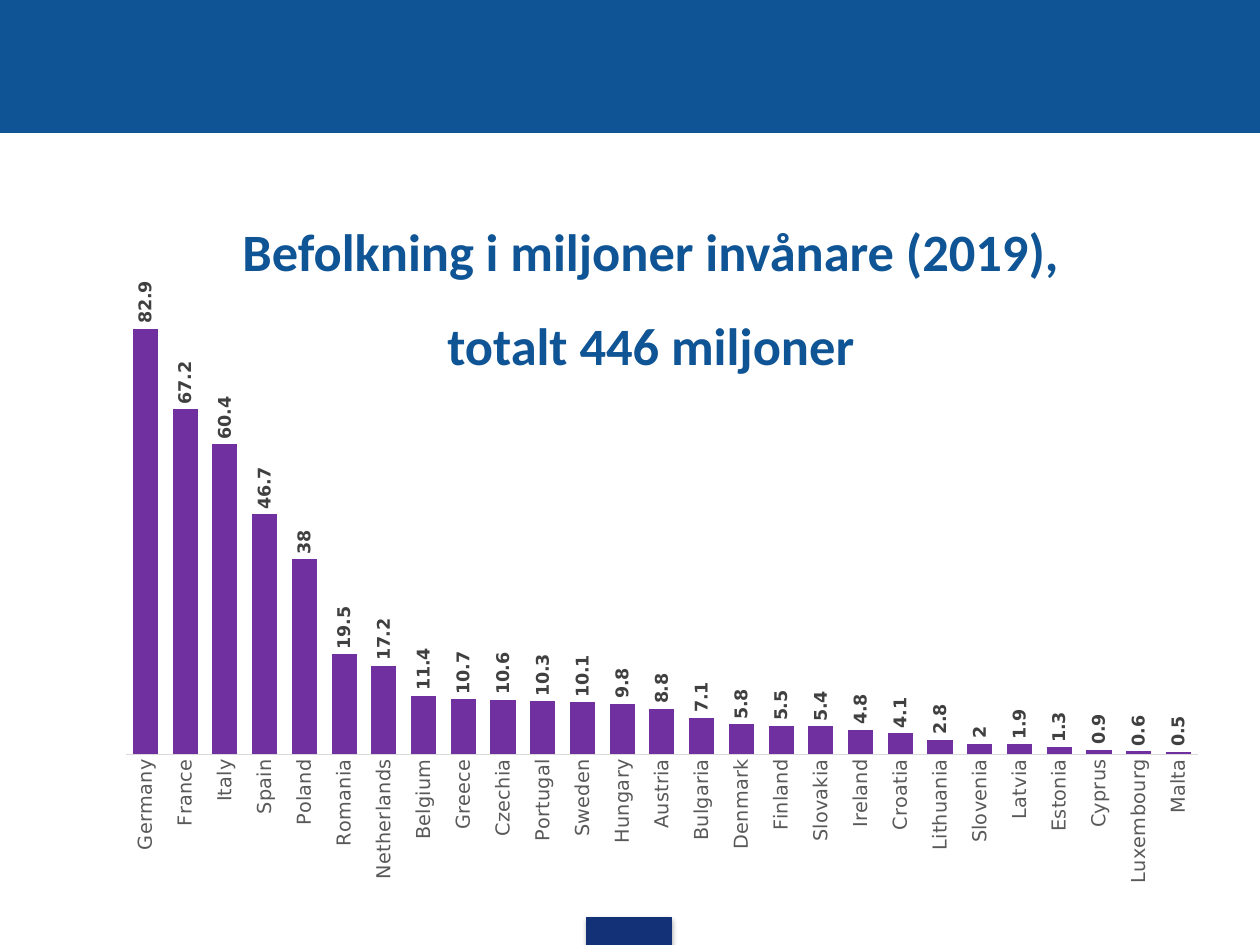
from lxml.etree import SubElement
from pptx import Presentation
from pptx.chart.data import CategoryChartData as ChartData
from pptx.dml.color import RGBColor as RGB
from pptx.enum.chart import XL_CHART_TYPE as CT, XL_LABEL_POSITION as LP, XL_TICK_MARK as TM
from pptx.enum.shapes import MSO_SHAPE as SHP
from pptx.enum.text import MSO_ANCHOR as ANC, PP_ALIGN as AL
from pptx.oxml import parse_xml
from pptx.oxml.ns import nsdecls, qn
from pptx.util import Pt

TITLE = ["Befolkning i miljoner invånare (2019),", "totalt 446 miljoner"]
POPULATION = {
    "Germany": 82.9, "France": 67.2, "Italy": 60.4, "Spain": 46.7, "Poland": 38,
    "Romania": 19.5, "Netherlands": 17.2, "Belgium": 11.4, "Greece": 10.7,
    "Czechia": 10.6, "Portugal": 10.3, "Sweden": 10.1, "Hungary": 9.8,
    "Austria": 8.8, "Bulgaria": 7.1, "Denmark": 5.8, "Finland": 5.5,
    "Slovakia": 5.4, "Ireland": 4.8, "Croatia": 4.1, "Lithuania": 2.8,
    "Slovenia": 2, "Latvia": 1.9, "Estonia": 1.3, "Cyprus": 0.9,
    "Luxembourg": 0.6, "Malta": 0.5,
}
COLORS = {"banner": "0F5494", "tab": "133176", "bar": "7030A0", "label": "404040",
          "category": "595959", "axis": "D9D9D9", "text": "000000"}
FONTS = {
    "title": {"name": "Calibri", "size": Pt(30), "bold": True},
    "chart": {"name": "DejaVu Sans", "size": Pt(10)},
    "category": {"name": "DejaVu Sans", "size": Pt(11)},
    "label": {"name": "DejaVu Sans", "size": Pt(10), "bold": True},
}
PLOT = {"x": 0.02, "y": 0.02, "w": 0.96, "h": 0.75}


def rgb(key):
    return RGB.from_string(COLORS[key])


def set_all(obj, values):
    for name, value in values.items():
        setattr(obj, name, value)


def style_font(font, kind, color):
    set_all(font, FONTS[kind])
    font.color.rgb = rgb(color)


def add_rect(s, box, color):
    sp = s.shapes.add_shape(SHP.RECTANGLE, *map(Pt, box))
    sp.shadow.inherit = False
    sp.fill.solid()
    sp.fill.fore_color.rgb = sp.line.color.rgb = rgb(color)
    sp.line.width = Pt(0.75)
    return sp


def add_shadow(sp):
    effects = sp._element.spPr.find(qn("a:effectLst"))
    shadow = SubElement(effects, qn("a:outerShdw"), blurRad=str(Pt(3.1)),
                        dist=str(Pt(1.8)), dir="5400000", rotWithShape="0")
    color = SubElement(shadow, qn("a:srgbClr"), val=COLORS["text"])
    SubElement(color, qn("a:alpha"), val="35000")


def turn_text(obj):
    body = next(obj._element.iter(qn("a:bodyPr")))
    body.set("rot", "-5400000")
    body.set("vert", "horz")


def place_plot(chart):
    area = chart._chartSpace.chart.plotArea
    for old in area.findall(qn("c:layout")):
        area.remove(old)
    modes = '<c:layoutTarget val="inner"/><c:xMode val="edge"/><c:yMode val="edge"/>'
    sizes = "".join(f'<c:{k} val="{v}"/>' for k, v in PLOT.items())
    area.insert(0, parse_xml(f'<c:layout {nsdecls("c")}><c:manualLayout>'
                             f'{modes}{sizes}</c:manualLayout></c:layout>'))


def add_title(s):
    tf = s.shapes.add_textbox(Pt(28), Pt(107), Pt(688), Pt(110)).text_frame
    set_all(tf, {"word_wrap": True, "vertical_anchor": ANC.TOP, "margin_left": 0,
                 "margin_right": 0, "margin_top": 0, "margin_bottom": 0})
    for i, line in enumerate(TITLE):
        p = tf.add_paragraph() if i else tf.paragraphs[0]
        set_all(p, {"alignment": AL.CENTER, "line_spacing": 1.5})
        r = p.add_run()
        r.text = line
        style_font(r.font, "title", "banner")


def add_population_chart(s):
    data = ChartData()
    data.categories = list(POPULATION)
    data.add_series("Series 1", list(POPULATION.values()))
    chart = s.shapes.add_chart(CT.COLUMN_CLUSTERED, Pt(59), Pt(160), Pt(638.6),
                               Pt(352), data).chart
    set_all(chart, {"has_legend": False, "has_title": False})
    style_font(chart.font, "chart", "text")
    place_plot(chart)

    set_all(chart.value_axis, {"visible": False, "has_major_gridlines": False,
                               "minimum_scale": 0, "maximum_scale": 90})
    axis = chart.category_axis
    set_all(axis, {"major_tick_mark": TM.NONE, "minor_tick_mark": TM.NONE})
    axis.format.line.color.rgb = rgb("axis")
    axis.format.line.width = Pt(0.75)
    style_font(axis.tick_labels.font, "category", "category")
    turn_text(axis)

    plot = chart.plots[0]
    set_all(plot, {"gap_width": 58, "overlap": -27, "vary_by_categories": False})
    series = plot.series[0]
    series.format.fill.solid()
    series.format.fill.fore_color.rgb = rgb("bar")
    labels = series.data_labels
    set_all(labels, {"show_value": True, "position": LP.OUTSIDE_END})
    style_font(labels.font, "label", "label")
    turn_text(labels)


def main():
    prs = Presentation()
    set_all(prs, {"slide_width": Pt(720), "slide_height": Pt(540)})
    s = prs.slides.add_slide(prs.slide_layouts[6])
    add_rect(s, (0, 0, 720, 75.6), "banner")
    add_shadow(add_rect(s, (335.5, 524.2, 48.2, 15.8), "tab"))
    add_title(s)
    add_population_chart(s)
    prs.save("out.pptx")


if __name__ == "__main__":
    main()
